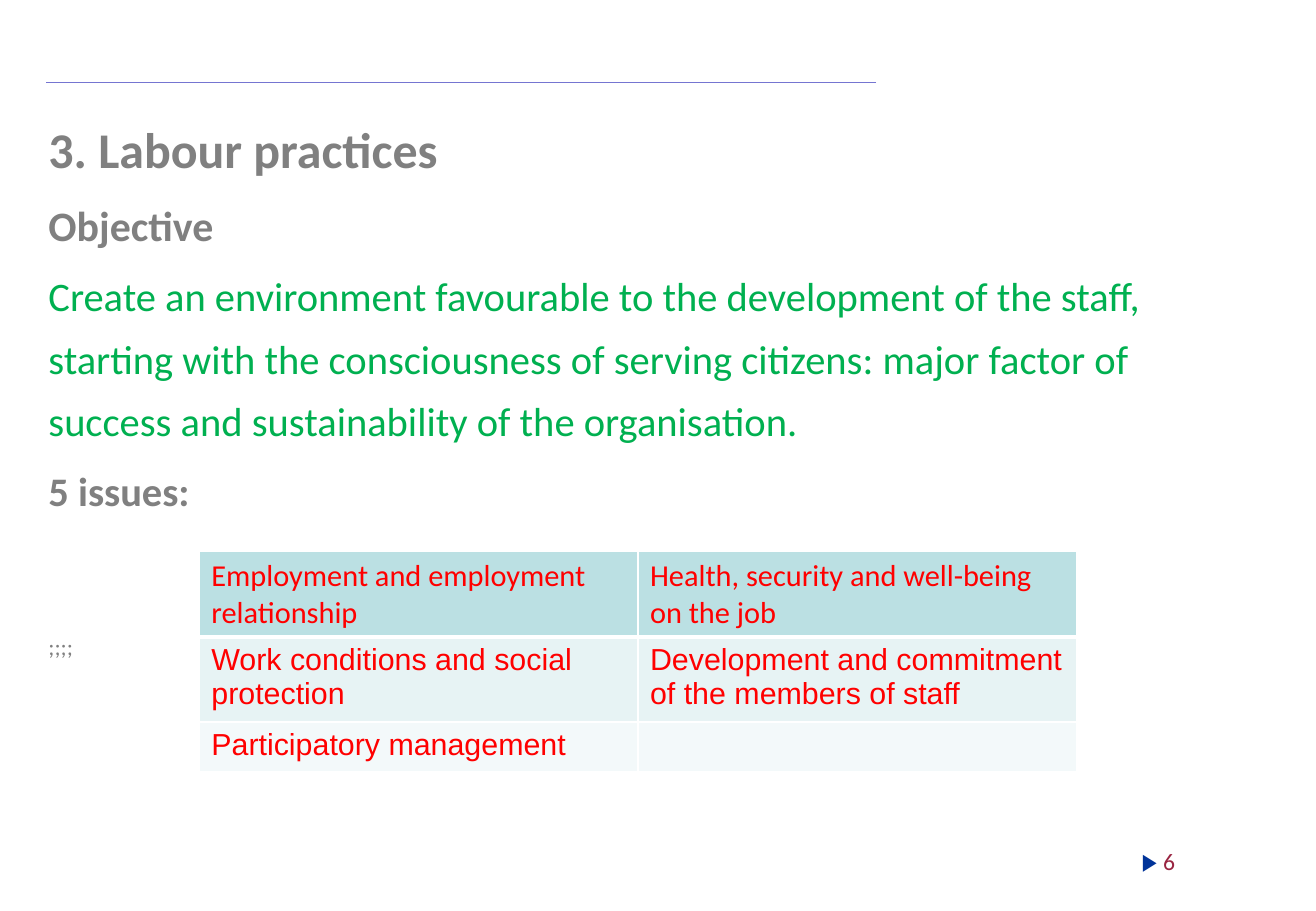
import pptx
import pptx.dml.color
import pptx.enum.shapes
import pptx.enum.text
import pptx.oxml
import pptx.oxml.ns
import pptx.util
from dataclasses import dataclass


@dataclass(frozen=True)
class Theme:
    heading: str = "808080"
    objective: str = "00B050"
    issue: str = "FF0000"
    rule: str = "7575D1"
    marker: str = "003399"
    number: str = "992441"
    border: str = "FFFFFF"
    row_fills: tuple = ("BBE0E3", "E7F3F4", "F3F9FA")
    main_font: str = "Calibri"
    table_font: str = "Arial"
    marker_font: str = "Times New Roman"
    title_size: float = 29.6
    subtitle_size: float = 24.8
    body_size: float = 24
    table_size: float = 18
    number_size: float = 14
    small_size: float = 13.6


class SlideBuilder:
    """Places elements on a grid of 100 columns by 100 rows."""

    def __init__(self, presentation, theme):
        self.theme = theme
        self.column = presentation.slide_width / 100
        self.row = presentation.slide_height / 100
        self.slide = presentation.slides.add_slide(presentation.slide_layouts[6])

    def place(self, left, top, width, height):
        return (round(left * self.column), round(top * self.row),
                round(width * self.column), round(height * self.row))

    def color(self, value):
        return pptx.dml.color.RGBColor.from_string(value)

    def run(self, paragraph, text, size, color, font, bold=False):
        run = paragraph.add_run()
        run.text = text
        run.font.size = pptx.util.Pt(size)
        run.font.name = font
        run.font.bold = bold
        run.font.color.rgb = self.color(color)

    def rule(self, left, right, row):
        x_start, y, x_end, _ = self.place(left, row, right, 0)
        line = self.slide.shapes.add_connector(
            pptx.enum.shapes.MSO_CONNECTOR.STRAIGHT, x_start, y, x_end, y)
        line.line.color.rgb = self.color(self.theme.rule)
        line.line.width = pptx.util.Pt(0.75)
        properties = line._element.spPr
        properties.append(pptx.oxml.parse_xml(
            f"<a:effectLst {pptx.oxml.ns.nsdecls('a')}/>"))

    def text(self, area, paragraphs, align="LEFT", anchor="TOP"):
        """Each paragraph is (line spacing, points before, list of runs)."""
        frame = self.slide.shapes.add_textbox(*self.place(*area)).text_frame
        frame.word_wrap = True
        frame.vertical_anchor = pptx.enum.text.MSO_ANCHOR[anchor]
        for index, (spacing, before, runs) in enumerate(paragraphs):
            paragraph = frame.add_paragraph() if index else frame.paragraphs[0]
            paragraph.alignment = pptx.enum.text.PP_ALIGN[align]
            paragraph.line_spacing = spacing
            paragraph.space_before = pptx.util.Pt(before)
            for run in runs:
                self.run(paragraph, *run)

    def borders(self, cell, bottom_width):
        properties = cell._tc.get_or_add_tcPr()
        widths = {"lnL": 1, "lnR": 1, "lnT": 1, "lnB": bottom_width}
        for index, (side, width) in enumerate(widths.items()):
            properties.insert(index, pptx.oxml.parse_xml(
                f"<a:{side} {pptx.oxml.ns.nsdecls('a')} w='{pptx.util.Pt(width)}'>"
                f"<a:solidFill><a:srgbClr val='{self.theme.border}'/></a:solidFill>"
                f"</a:{side}>"))

    def table(self, left, top, width, row_heights, rows):
        theme = self.theme
        area = self.place(left, top, width, sum(row_heights))
        table = self.slide.shapes.add_table(len(rows), len(rows[0]), *area).table
        for row_index, texts in enumerate(rows):
            header = row_index == 0
            table.rows[row_index].height = round(row_heights[row_index] * self.row)
            for column_index, text in enumerate(texts):
                cell = table.cell(row_index, column_index)
                cell.fill.solid()
                cell.fill.fore_color.rgb = self.color(theme.row_fills[row_index])
                self.borders(cell, 3 if header else 1)
                if text:
                    self.run(cell.text_frame.paragraphs[0], text, theme.table_size,
                             theme.issue, theme.main_font if header else theme.table_font)


def main():
    presentation = pptx.Presentation()
    presentation.slide_width = pptx.util.Inches(10.83)
    presentation.slide_height = pptx.util.Inches(7.5)
    theme = Theme()
    builder = SlideBuilder(presentation, theme)
    font = theme.main_font

    builder.rule(66.57, 3.51, 9.07)
    builder.text((2.77, 9.07, 92.98, 80.8), [
        (1.5, 0, [("3. Labour practices", theme.title_size, theme.heading, font, True)]),
        (1.28, 4.5, [("Objective", theme.subtitle_size, theme.heading, font, True)]),
        (1.28, 4.5, [("Create an environment favourable to the development of the staff, "
                      "starting with the consciousness of serving citizens: major factor of "
                      "success and sustainability of the organisation.",
                      theme.body_size, theme.objective, font)]),
        (1.28, 4.5, [("5 issues:", theme.body_size, theme.heading, font, True)]),
        (1.28, 65.5, [(";;;;", theme.small_size, theme.heading, font)]),
    ])
    builder.text((83.1, 91.87, 7.11, 5.33), [
        (1, 0, [("▶ ", theme.number_size, theme.marker, theme.marker_font),
                ("6", theme.number_size, theme.number, font)]),
    ], align="RIGHT", anchor="MIDDLE")
    builder.table(15.14, 60.53, 66.67, (9.4, 8.9, 5.47), [
        ("Employment and employment relationship",
         "Health, security and well-being on the job"),
        ("Work conditions and social protection",
         "Development and commitment of the members of staff"),
        ("Participatory management", ""),
    ])
    presentation.save("out.pptx")


if __name__ == "__main__":
    main()
